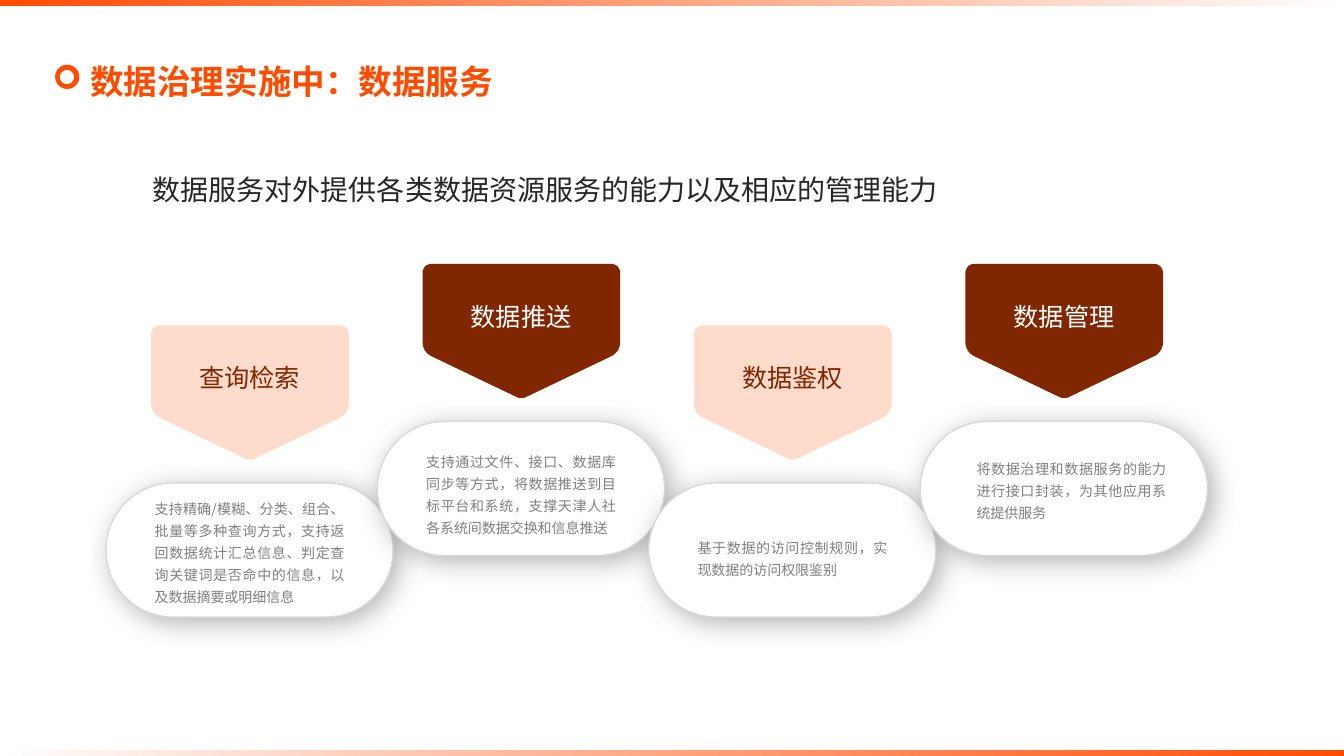
"""Build the data service slide with four staggered badge and pill pairs."""
from dataclasses import dataclass

from lxml.etree import SubElement
from pptx import Presentation
from pptx.dml.color import RGBColor
from pptx.enum.shapes import MSO_SHAPE
from pptx.enum.text import MSO_ANCHOR, MSO_AUTO_SIZE, PP_ALIGN
from pptx.oxml.ns import qn
from pptx.util import Cm, Pt

FONT = "Noto Sans CJK SC"
COLORS = {
    "orange": "FF4B00", "peach": "FFDBCC", "brown": "802600", "white": "FFFFFF",
    "border": "D9D9D9", "heading": "262626", "body": "808080",
}
FORMATS = {
    "title": {"size": Pt(24), "bold": True},
    "heading": {"size": Pt(20)},
    "label": {"size": Pt(18)},
    "body": {"size": Pt(10)},
}
PITCH, DROP = 6.84, 1.55
BADGE_W, BADGE_LEFT, BADGE_TOP = 4.98, 3.81, 6.65
PILL_W, PILL_H, PILL_LEFT, PILL_TOP = 7.24, 3.38, 2.67, 10.62


@dataclass(frozen=True)
class Service:
    label: str
    body: str
    low: bool
    text_dx: float
    text_dy: float
    text_h: float

    @property
    def drop(self) -> float:
        return DROP if self.low else 0


SERVICES = [
    Service("查询检索", "支持精确/模糊、分类、组合、批量等多种查询方式，支持返回数据统计汇总信息、"
            "判定查询关键词是否命中的信息，以及数据摘要或明细信息", True, 0.98, 0.2, 2.97),
    Service("数据推送", "支持通过文件、接口、数据库同步等方式，将数据推送到目标平台和系统，"
            "支撑天津人社各系统间数据交换和信息推送", False, 0.98, 0.56, 2.41),
    Service("数据鉴权", "基于数据的访问控制规则，实现数据的访问权限鉴别", True, 0.98, 1.17, 1.32),
    Service("数据管理", "将数据治理和数据服务的能力进行接口封装，为其他应用系统提供服务",
            False, 1.17, 0.73, 1.93),
]


def rgb(name: str) -> RGBColor:
    return RGBColor.from_string(COLORS[name])


def box(left: float, top: float, width: float, height: float) -> list:
    return [Cm(v) for v in (left, top, width, height)]


def write(sp, text: str, style: str, color: str, align, spacing: float = 1.3, **frame):
    tf = sp.text_frame
    settings = {"word_wrap": True, "vertical_anchor": MSO_ANCHOR.TOP,
                "auto_size": MSO_AUTO_SIZE.SHAPE_TO_FIT_TEXT, **frame}
    for name, value in settings.items():
        setattr(tf, name, value)
    p = tf.paragraphs[0]
    p.alignment, p.line_spacing = align, spacing
    r = p.add_run()
    r.text = text
    for name, value in {"name": FONT, **FORMATS[style]}.items():
        setattr(r.font, name, value)
    r.font.color.rgb = rgb(color)
    SubElement(r.font._element, qn("a:ea"), typeface=FONT)
    return p


def paint(sp, fill: str) -> None:
    sp.shadow.inherit = False
    sp.fill.solid()
    sp.fill.fore_color.rgb = rgb(fill)
    sp.line.fill.background()


def add_strip(s, top: float, angle: int) -> None:
    sp = s.shapes.add_shape(MSO_SHAPE.RECTANGLE, *box(0, top, 33.87, 0.15))
    sp.shadow.inherit = False
    sp.line.fill.background()
    sp.fill.gradient()
    sp.fill.gradient_angle = angle
    for stop in sp.fill.gradient_stops:
        stop.color.rgb = rgb("orange")
    faded = list(sp.element.spPr.iter(qn("a:srgbClr")))[-1]
    SubElement(faded, qn("a:alpha"), val="0")


def add_title(s) -> None:
    sp = s.shapes.add_textbox(*box(1.07, 1.02, 32.05, 2.06))
    p = write(sp, "数据治理实施中：数据服务", "title", "orange", PP_ALIGN.LEFT, 1.0,
              vertical_anchor=MSO_ANCHOR.MIDDLE, auto_size=MSO_AUTO_SIZE.NONE)
    pPr = p._p.get_or_add_pPr()
    pPr.set("marL", str(Cm(0.95)))
    pPr.set("indent", str(-Cm(0.95)))
    SubElement(pPr, qn("a:buFont"), typeface="Wingdings")
    SubElement(pPr, qn("a:buChar"), char="➢")


def add_heading(s) -> None:
    sp = s.shapes.add_textbox(*box(3.33, 4.09, 20.83, 0.99))
    margins = {f"margin_{side}": 0 for side in ("left", "top", "right", "bottom")}
    write(sp, "数据服务对外提供各类数据资源服务的能力以及相应的管理能力",
          "heading", "heading", PP_ALIGN.CENTER, **margins)


def add_pill(s, item: Service, column: int) -> None:
    left, top = PILL_LEFT + column * PITCH, PILL_TOP + item.drop
    sp = s.shapes.add_shape(MSO_SHAPE.ROUNDED_RECTANGLE, *box(left, top, PILL_W, PILL_H))
    sp.adjustments[0] = 0.5
    paint(sp, "white")
    sp.line.color.rgb = rgb("border")
    sp.line.width = Pt(1)
    effects = sp.element.spPr.find(qn("a:effectLst"))
    shadow = SubElement(effects, qn("a:outerShdw"), blurRad=str(Pt(20)), dist=str(Pt(5)),
                        dir="2700000", algn="tl", rotWithShape="0")
    color = SubElement(shadow, qn("a:srgbClr"), val="000000")
    SubElement(color, qn("a:alpha"), val="30000")
    sp = s.shapes.add_textbox(*box(left + item.text_dx, top + item.text_dy, 5.28, item.text_h))
    write(sp, item.body, "body", "body", PP_ALIGN.JUSTIFY)


def curve(a: tuple, b: tuple, c: tuple, d: tuple, steps: int = 10) -> list:
    points = []
    for i in range(steps + 1):
        t = i / steps
        weights = ((1 - t) ** 3, 3 * t * (1 - t) ** 2, 3 * t * t * (1 - t), t ** 3)
        points.append(tuple(sum(w * q[k] for w, q in zip(weights, (a, b, c, d)))
                            for k in (0, 1)))
    return points


def badge_outline() -> list:
    half = BADGE_W / 2
    right = [
        *curve((half - 0.23, 0), (half - 0.1, 0), (half, 0.1), (half, 0.23)),
        *curve((half, 1.98), (half, 2.13), (half - 0.1, 2.28), (half - 0.25, 2.34)),
        *curve((0.11, 3.36), (0.07, 3.38), (0.04, 3.38), (0, 3.38)),
    ]
    return right + [(-x, y) for x, y in reversed(right[:-1])]


def add_badge(s, item: Service, column: int) -> None:
    left, top = BADGE_LEFT + column * PITCH, BADGE_TOP + item.drop
    fill, ink = ("peach", "brown") if item.low else ("brown", "white")
    axis = left + BADGE_W / 2
    points = [(Cm(axis + x), Cm(top + y)) for x, y in badge_outline()]
    builder = s.shapes.build_freeform(*points[0])
    builder.add_line_segments(points[1:], close=True)
    paint(builder.convert_to_shape(), fill)
    sp = s.shapes.add_shape(MSO_SHAPE.RECTANGLE, *box(left + 0.95, top + 0.58, 3.07, 1.17))
    paint(sp, fill)
    write(sp, item.label, "label", ink, PP_ALIGN.CENTER, word_wrap=False)


def main() -> None:
    prs = Presentation()
    prs.slide_width, prs.slide_height = Cm(33.87), Cm(19.05)
    s = prs.slides.add_slide(prs.slide_layouts[6])
    s.background.fill.solid()
    s.background.fill.fore_color.rgb = rgb("white")
    add_strip(s, -0.01, 0)
    add_strip(s, 18.92, 180)
    add_title(s)
    add_heading(s)
    for draw in (add_pill, add_badge):
        for column, item in enumerate(SERVICES):
            draw(s, item, column)
    prs.save("out.pptx")


if __name__ == "__main__":
    main()
